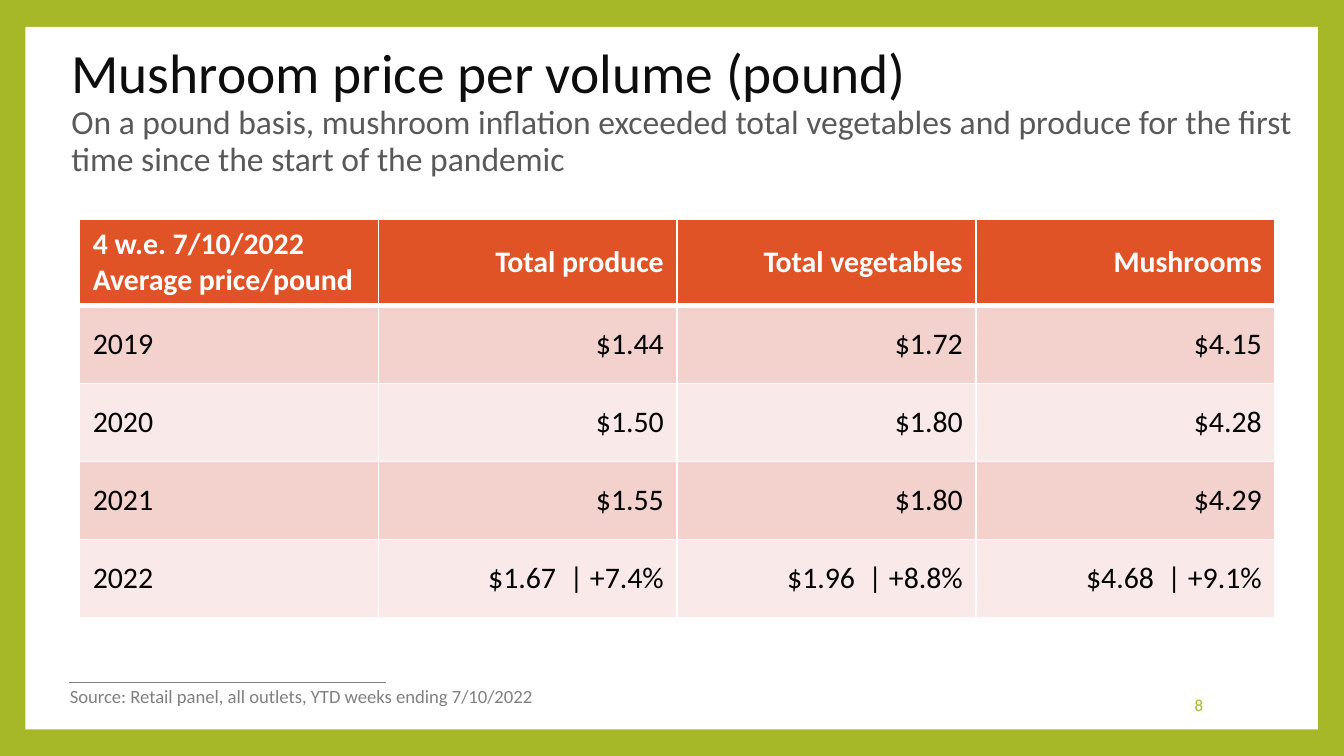
from dataclasses import dataclass

from lxml.etree import SubElement
from pptx import Presentation
from pptx.dml.color import RGBColor
from pptx.enum.shapes import MSO_CONNECTOR, MSO_SHAPE
from pptx.enum.text import MSO_ANCHOR, PP_ALIGN
from pptx.oxml.ns import qn
from pptx.util import Cm, Pt


@dataclass(frozen=True)
class Theme:
    font: str = "Calibri"
    green: str = "A6B727"
    white: str = "FFFFFF"
    black: str = "000000"
    title: str = "0D0D0D"
    subtitle: str = "595959"
    source: str = "808080"
    header: str = "DF5327"
    bands: tuple = ("F3D1CD", "F9E9E8")
    title_size: float = 29.7
    subtitle_size: float = 18
    table_size: float = 16
    source_size: float = 10
    number_size: float = 9


@dataclass(frozen=True)
class Box:
    """A region of the slide, in centimetres."""
    left: float
    top: float
    width: float
    height: float

    def lengths(self):
        return Cm(self.left), Cm(self.top), Cm(self.width), Cm(self.height)


THEME = Theme()
PRICES = [
    ("4 w.e. 7/10/2022\nAverage price/pound", "Total produce", "Total vegetables", "Mushrooms"),
    ("2019", "$1.44", "$1.72", "$4.15"),
    ("2020", "$1.50", "$1.80", "$4.28"),
    ("2021", "$1.55", "$1.80", "$4.29"),
    ("2022", "$1.67  | +7.4%", "$1.96  | +8.8%", "$4.68  | +9.1%"),
]


def set_font(font, size, color, bold=False):
    font.name = THEME.font
    font.size = Pt(size)
    font.bold = bold
    font.color.rgb = RGBColor.from_string(color)


def add_text_box(slide, box, anchor=MSO_ANCHOR.TOP, wrap=True):
    """Add an empty text box and return its first paragraph."""
    frame = slide.shapes.add_textbox(*box.lengths()).text_frame
    frame.word_wrap = wrap
    frame.vertical_anchor = anchor
    return frame.paragraphs[0]


def add_frame(slide, box):
    """Set a white panel on the green background."""
    background = slide.background.fill
    background.solid()
    background.fore_color.rgb = RGBColor.from_string(THEME.green)
    panel = slide.shapes.add_shape(MSO_SHAPE.RECTANGLE, *box.lengths())
    panel.shadow.inherit = False
    panel.fill.solid()
    panel.fill.fore_color.rgb = RGBColor.from_string(THEME.white)
    panel.line.fill.background()


def add_heading(slide, box, title, subtitle):
    paragraph = add_text_box(slide, box, MSO_ANCHOR.MIDDLE)
    paragraph.line_spacing = 0.9
    title_run = paragraph.add_run()
    title_run.text = title
    set_font(title_run.font, THEME.title_size, THEME.title)
    paragraph.add_line_break()
    subtitle_run = paragraph.add_run()
    subtitle_run.text = subtitle
    set_font(subtitle_run.font, THEME.subtitle_size, THEME.subtitle)


def set_borders(cell, bottom_width):
    properties = cell._tc.get_or_add_tcPr()
    widths = {"a:lnL": 1, "a:lnR": 1, "a:lnT": 1, "a:lnB": bottom_width}
    for position, (tag, width) in enumerate(widths.items()):
        border = properties.makeelement(qn(tag), {"w": str(Pt(width))})
        fill = SubElement(border, qn("a:solidFill"))
        SubElement(fill, qn("a:srgbClr"), val=THEME.white)
        properties.insert(position, border)


def add_price_table(slide, box, rows, header_height):
    column_count = len(rows[0])
    table = slide.shapes.add_table(len(rows), column_count, *box.lengths()).table
    for column in table.columns:
        column.width = Cm(box.width / column_count)
    body_height = (box.height - header_height) / (len(rows) - 1)
    for row_index, values in enumerate(rows):
        is_header = row_index == 0
        table.rows[row_index].height = Cm(header_height if is_header else body_height)
        fill = THEME.header if is_header else THEME.bands[(row_index - 1) % 2]
        color = THEME.white if is_header else THEME.black
        for column_index, value in enumerate(values):
            cell = table.cell(row_index, column_index)
            cell.text = value
            cell.vertical_anchor = MSO_ANCHOR.MIDDLE
            cell.fill.solid()
            cell.fill.fore_color.rgb = RGBColor.from_string(fill)
            set_borders(cell, 3 if row_index == 0 else 1)
            for paragraph in cell.text_frame.paragraphs:
                paragraph.alignment = PP_ALIGN.RIGHT if column_index else PP_ALIGN.LEFT
                set_font(paragraph.font, THEME.table_size, color, is_header)


def add_source(slide, box, text, rule_width):
    """Place the source note under a thin rule."""
    rule_left, rule_top = Cm(box.left + 0.23), Cm(box.top + 0.07)
    rule = slide.shapes.add_connector(
        MSO_CONNECTOR.STRAIGHT, rule_left, rule_top, rule_left + Cm(rule_width), rule_top)
    rule.line.color.rgb = RGBColor.from_string(THEME.source)
    rule.line.width = Pt(0.79)
    SubElement(rule._element.spPr, qn("a:effectLst"))
    paragraph = add_text_box(slide, box, wrap=False)
    paragraph.text = text
    set_font(paragraph.font, THEME.source_size, THEME.source)


def add_page_number(slide, box, number):
    paragraph = add_text_box(slide, box, MSO_ANCHOR.MIDDLE)
    paragraph.text = str(number)
    paragraph.alignment = PP_ALIGN.RIGHT
    set_font(paragraph.font, THEME.number_size, THEME.green)


def main():
    presentation = Presentation()
    presentation.slide_width = Cm(25.4)
    presentation.slide_height = Cm(14.29)
    slide = presentation.slides.add_slide(presentation.slide_layouts[6])
    add_frame(slide, Box(0.48, 0.51, 24.43, 13.28))
    add_heading(
        slide, Box(1.1, 0.92, 23.95, 2.4),
        "Mushroom price per volume (pound)",
        "On a pound basis, mushroom inflation exceeded total vegetables and produce "
        "for the first time since the start of the pandemic")
    add_price_table(slide, Box(1.5, 4.14, 22.6, 7.54), PRICES, 1.63)
    add_source(
        slide, Box(1.07, 12.83, 10.24, 0.69),
        "Source: Retail panel, all outlets, YTD weeks ending 7/10/2022", 6)
    add_page_number(slide, Box(19.43, 12.95, 3.56, 0.76), 8)
    presentation.save("out.pptx")


if __name__ == "__main__":
    main()
